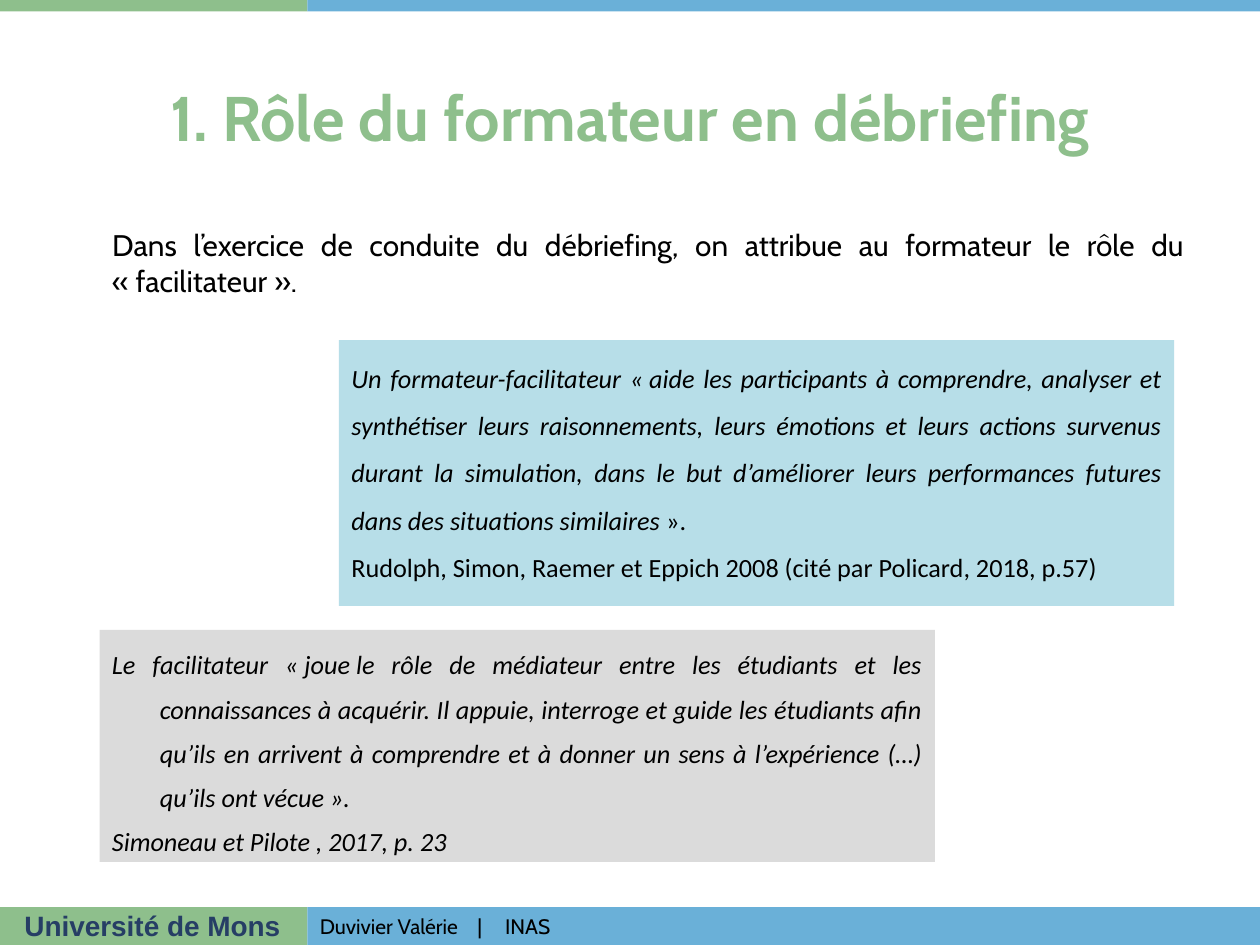
from lxml import etree
from pptx import Presentation
from pptx.dml.color import RGBColor
from pptx.enum.shapes import MSO_SHAPE
from pptx.enum.text import MSO_ANCHOR, MSO_AUTO_SIZE, PP_ALIGN
from pptx.oxml.ns import qn
from pptx.util import Inches, Pt

RECT = MSO_SHAPE.RECTANGLE
TOP, MIDDLE = MSO_ANCHOR.TOP, MSO_ANCHOR.MIDDLE
LEFT, CENTER, JUSTIFY = PP_ALIGN.LEFT, PP_ALIGN.CENTER, PP_ALIGN.JUSTIFY
NO_FIT = MSO_AUTO_SIZE.NONE

# Content: each paragraph is a list of (text, italic) runs
TITLE = [[("1. Rôle du formateur en débriefing", False)]]
INTRO = [[("Dans l’exercice de conduite du débriefing, on attribue au formateur "
           "le rôle du «\u00a0facilitateur\u00a0».", False)]]
SCHOOL = [[("Université de Mons", False)]]
AUTHOR = [[("Duvivier Valérie\t|\tINAS", False)]]
QUOTE_DEBRIEF = [
    [("Un formateur-facilitateur «\u00a0aide les participants à comprendre, analyser et "
      "synthétiser leurs raisonnements, leurs émotions et leurs actions survenus durant "
      "la simulation, dans le but d’améliorer leurs performances futures dans des "
      "situations similaires", True), ("\u00a0».", False)],
    [("Rudolph, Simon, Raemer et Eppich 2008 (cité par Policard, 2018, p.57)", False)],
]
QUOTE_MEDIATOR = [
    [("Le facilitateur «\u00a0joue\u00a0le rôle de médiateur entre les étudiants et les "
      "connaissances à acquérir. Il appuie, interroge et guide les étudiants afin qu’ils "
      "en arrivent à comprendre et à donner un sens à l’expérience (…) qu’ils ont "
      "vécue ».", True)],
    [("Simoneau et Pilote , 2017, p. 23", True)],
]

# Colours and measures in inches
GREEN, BLUE, NAVY, BLACK = "8EBF8C", "6AB0D8", "263E65", "000000"
PALE_BLUE, GREY = "B7DEE8", "DBDBDB"
SLIDE_W, SLIDE_H, SPLIT = 10, 7.5, 2.44
HEADER_H, FOOTER_H = 0.09, 0.3
FOOTER_TOP = SLIDE_H - FOOTER_H
HANGING = 0.38
AUTHOR_TABS = (1.25, 1.47)

# Text formats
TITLE_FONT = {"name": "Cabin", "size": Pt(36), "bold": True}
INTRO_FONT = {"name": "Cabin", "size": Pt(17), "bold": False}
SCHOOL_FONT = {"name": "Arial", "size": Pt(16), "bold": True}
AUTHOR_FONT = {"name": "Cabin", "size": Pt(12)}
QUOTE_FONT = {"name": "Calibri", "size": Pt(15)}


def rgb(color):
    return RGBColor.from_string(color)


def place(sp, box):
    for name, value in zip(("left", "top", "width", "height"), box):
        setattr(sp, name, Inches(value))


def add_rect(box, color):
    sp = shapes.add_shape(RECT, *map(Inches, box))
    sp.shadow.inherit = False
    sp.fill.solid()
    sp.fill.fore_color.rgb = rgb(color)
    sp.line.fill.background()
    return sp


def write(sp, paragraphs, font, color, align, anchor=TOP, **spacing):
    tf = sp.text_frame
    tf.word_wrap = True
    tf.auto_size = NO_FIT
    tf.vertical_anchor = anchor
    for i, runs in enumerate(paragraphs):
        p = tf.add_paragraph() if i else tf.paragraphs[0]
        p.alignment = align
        for name, value in spacing.items():
            setattr(p, name, value)
        for text, italic in runs:
            r = p.add_run()
            r.text = text
            r.font.italic = italic
            r.font.color.rgb = rgb(color)
            for name, value in font.items():
                setattr(r.font, name, value)


def set_indent(p, left, first):
    pPr = p._p.get_or_add_pPr()
    pPr.set("marL", str(Inches(left)))
    pPr.set("indent", str(Inches(first)))
    return pPr


prs = Presentation()
prs.slide_width, prs.slide_height = Inches(SLIDE_W), Inches(SLIDE_H)
slide = prs.slides.add_slide(prs.slide_layouts[1])
shapes = slide.shapes

# Title and introduction
title, body = shapes.title, slide.placeholders[1]
place(title, (0.5, 0.3, 9, 1.25))
write(title, TITLE, TITLE_FONT, GREEN, CENTER, MIDDLE)
place(body, (0.79, 1.75, 8.71, 5.4))
write(body, INTRO, INTRO_FONT, BLACK, JUSTIFY, space_before=Pt(3.4))
etree.SubElement(set_indent(body.text_frame.paragraphs[0], 0, 0), qn("a:buNone"))

# Header and footer bands
for top, height in ((0, HEADER_H), (FOOTER_TOP, FOOTER_H)):
    add_rect((0, top, SPLIT, height), GREEN)
    add_rect((SPLIT, top, SLIDE_W - SPLIT, height), BLUE)

# Footer texts
school = shapes.add_textbox(*map(Inches, (-0.01, 7.16, SPLIT, 0.37)))
write(school, SCHOOL, SCHOOL_FONT, NAVY, CENTER)
author = shapes.add_textbox(*map(Inches, (SPLIT, FOOTER_TOP, 7, FOOTER_H)))
write(author, AUTHOR, AUTHOR_FONT, BLACK, LEFT, MIDDLE)
tabs = etree.SubElement(author.text_frame.paragraphs[0]._p.get_or_add_pPr(), qn("a:tabLst"))
for stop in AUTHOR_TABS:
    etree.SubElement(tabs, qn("a:tab"), pos=str(Inches(stop)), algn="l")

# Quotations
quote = add_rect((2.69, 2.7, 6.63, 2.11), PALE_BLUE)
write(quote, QUOTE_DEBRIEF, QUOTE_FONT, BLACK, JUSTIFY, line_spacing=1.5)
quote = add_rect((0.79, 5, 6.63, 1.84), GREY)
write(quote, QUOTE_MEDIATOR, QUOTE_FONT, BLACK, JUSTIFY, line_spacing=1.4)
for p in quote.text_frame.paragraphs:
    set_indent(p, HANGING, -HANGING)

prs.save("out.pptx")
